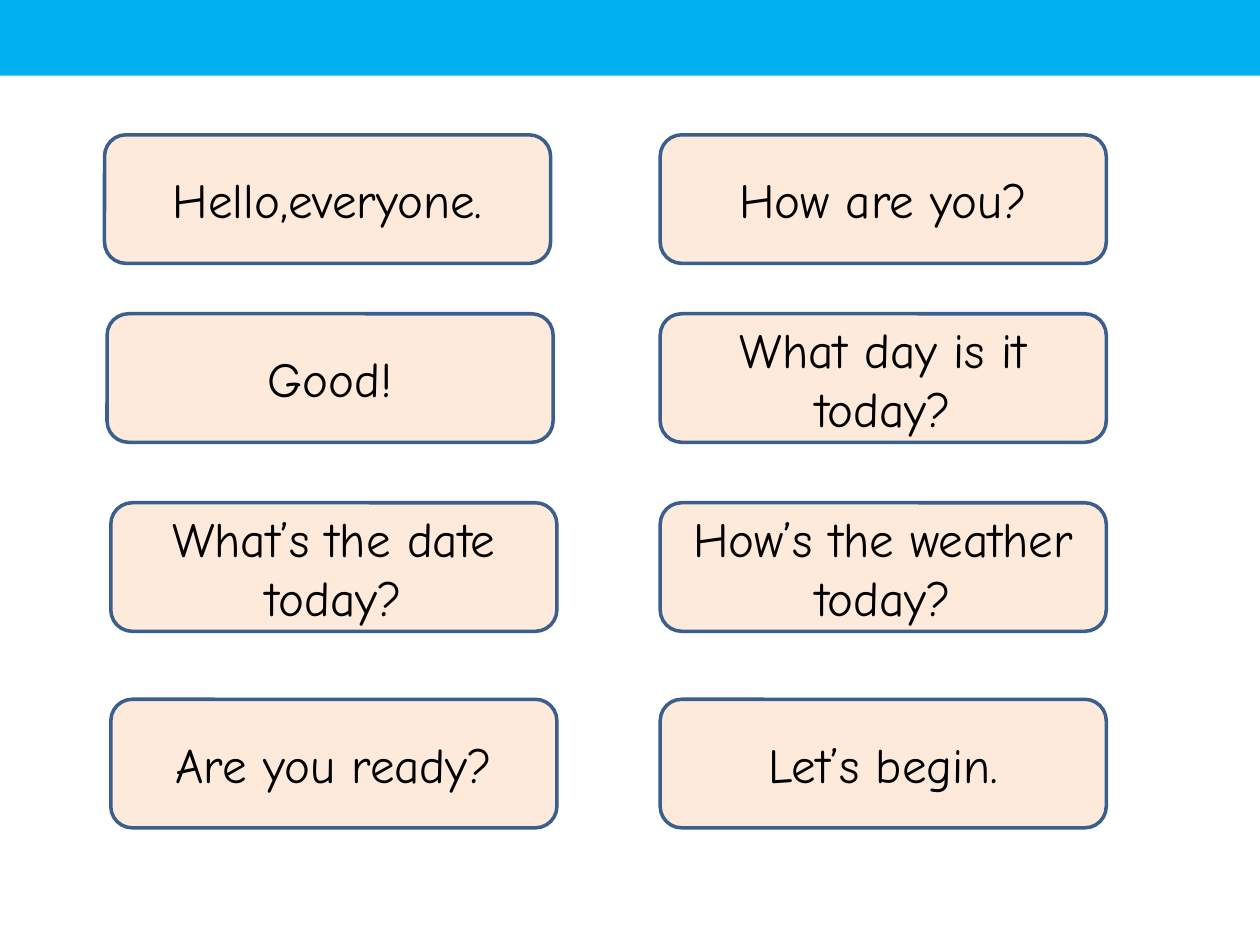
from typing import NamedTuple

from pptx import Presentation
from pptx.dml.color import RGBColor
from pptx.enum import shapes, text
from pptx.util import Inches, Pt

SKY = RGBColor(0x00, 0xB0, 0xF0)
PEACH = RGBColor(0xFD, 0xEA, 0xDA)
NAVY = RGBColor(0x3A, 0x5F, 0x8C)
BLACK = RGBColor(0, 0, 0)

FONT = "Comic Neue"
SLIDE_W, SLIDE_H = Inches(10), Inches(7.5)
BAND_H = 0.08  # share of the slide's height
CARD_W, CARD_H = Inches(3.54), Inches(1.02)
RIGHT_COLUMN = 5.24


class Row(NamedTuple):
    top: float
    left: float  # the left column steps slightly inwards
    phrases: tuple[str, str]


ROWS = (
    Row(1.07, 0.83, ("Hello,everyone.", "How are you?")),
    Row(2.49, 0.85, ("Good!", "What day is it today?")),
    Row(3.99, 0.88, ("What’s the date today?", "How’s the weather today?")),
    Row(5.55, 0.88, ("Are you ready?", "Let’s begin.")),
)


def add_card(slide, left: float, top: float, phrase: str) -> None:
    sp = slide.shapes.add_shape(
        shapes.MSO_SHAPE.ROUNDED_RECTANGLE, Inches(left), Inches(top), CARD_W, CARD_H
    )
    sp.shadow.inherit = False
    sp.fill.solid()
    sp.fill.fore_color.rgb = PEACH
    sp.line.color.rgb = NAVY
    sp.line.width = Pt(2)

    tf = sp.text_frame
    tf.text = phrase
    tf.word_wrap = True
    tf.vertical_anchor = text.MSO_ANCHOR.MIDDLE
    p = tf.paragraphs[0]
    p.alignment = text.PP_ALIGN.CENTER
    font = p.runs[0].font
    font.name = FONT
    font.size = Pt(28)
    font.color.rgb = BLACK


def add_top_band(slide) -> None:
    sp = slide.shapes.add_shape(
        shapes.MSO_SHAPE.RECTANGLE, 0, 0, SLIDE_W, int(SLIDE_H * BAND_H)
    )
    sp.shadow.inherit = False
    sp.fill.solid()
    sp.fill.fore_color.rgb = SKY
    sp.line.fill.background()


def main() -> None:
    prs = Presentation()
    prs.slide_width, prs.slide_height = SLIDE_W, SLIDE_H
    slide = prs.slides.add_slide(prs.slide_layouts.get_by_name("Blank"))
    for row in ROWS:
        for left, phrase in zip((row.left, RIGHT_COLUMN), row.phrases):
            add_card(slide, left, row.top, phrase)
    add_top_band(slide)
    prs.save("out.pptx")


if __name__ == "__main__":
    main()
